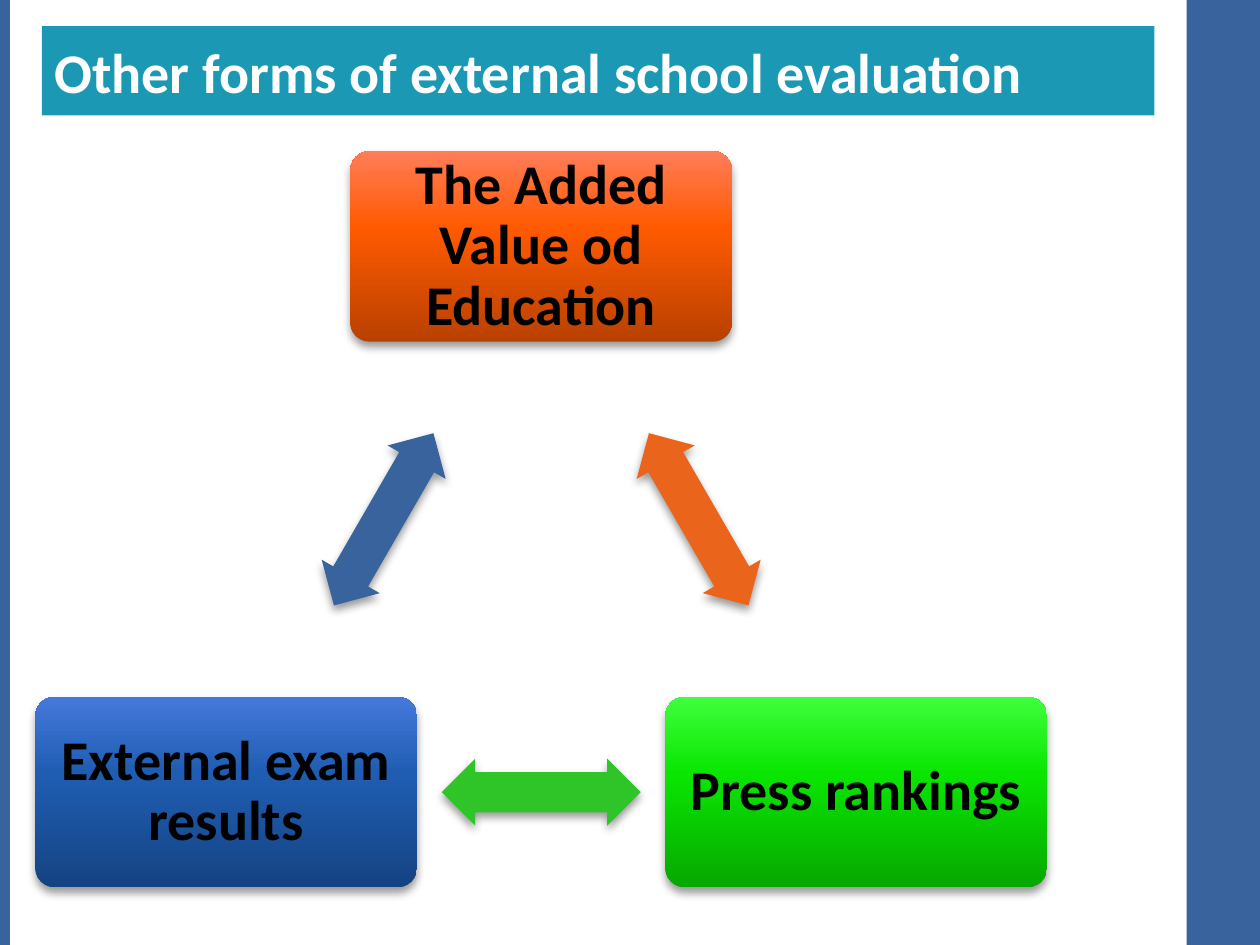
import math

import lxml.etree
import pptx
import pptx.dml.color
import pptx.enum.shapes
import pptx.enum.text
import pptx.oxml
import pptx.util

Cm = pptx.util.Cm
SHAPE = pptx.enum.shapes.MSO_SHAPE
ANCHOR = pptx.enum.text.MSO_ANCHOR
ALIGN = pptx.enum.text.PP_ALIGN
NS = 'xmlns:a="http://schemas.openxmlformats.org/drawingml/2006/main"'
SHADOW = (
    f'<a:effectLst {NS}><a:outerShdw blurRad="65500" dist="38100" dir="5400000" rotWithShape="0">'
    '<a:srgbClr val="000000"><a:alpha val="40000"/></a:srgbClr></a:outerShdw></a:effectLst>'
)


def add_block(kind, center_x, center_y, width, height, fill, shaded=False):
    """Add a borderless shape by its centre; several fills make a gradient from bottom to top."""
    block = slide.shapes.add_shape(
        kind, Cm(center_x - width / 2), Cm(center_y - height / 2), Cm(width), Cm(height))
    block.shadow.inherit = False
    block.line.fill.background()
    properties = block.fill._xPr
    if isinstance(fill, str):
        block.fill.solid()
        block.fill.fore_color.rgb = pptx.dml.color.RGBColor.from_string(fill)
    else:
        stops = "".join(f'<a:gs pos="{position}"><a:srgbClr val="{color}"/></a:gs>'
                        for position, color in zip((0, 60000, 100000), fill))
        gradient = pptx.oxml.parse_xml(
            f'<a:gradFill {NS} rotWithShape="1"><a:gsLst>{stops}</a:gsLst>'
            '<a:lin ang="16200000" scaled="0"/></a:gradFill>')
        properties.find(pptx.oxml.ns.qn("a:prstGeom")).addnext(gradient)
    if shaded:
        effects = properties.find(pptx.oxml.ns.qn("a:effectLst"))
        properties.replace(effects, pptx.oxml.parse_xml(SHADOW))
    return block


def write_text(block, text, color="000000", align=ALIGN.CENTER, spacing=0.9, inset=0.22):
    frame = block.text_frame
    frame.word_wrap = True
    frame.vertical_anchor = ANCHOR.MIDDLE
    frame.margin_left = frame.margin_right = Cm(inset)
    frame.margin_top = frame.margin_bottom = Cm(0.13)
    paragraph = frame.paragraphs[0]
    paragraph.alignment = align
    paragraph.line_spacing = spacing
    run = paragraph.add_run()
    run.text = text
    run.font.name = "Calibri"
    run.font.size = pptx.util.Pt(32)
    run.font.bold = True
    run.font.color.rgb = pptx.dml.color.RGBColor.from_string(color)


deck = pptx.Presentation()
deck.slide_width, deck.slide_height = Cm(25.4), Cm(19.05)
slide = deck.slides.add_slide(deck.slide_layouts[6])

# Side bands and title bar
add_block(SHAPE.RECTANGLE, 24.66, 9.525, 1.48, 19.05, "39639D")
add_block(SHAPE.RECTANGLE, 0.1, 9.525, 0.2, 19.05, "39639D")
title = add_block(SHAPE.RECTANGLE, 12.06, 1.43, 22.43, 1.8, "1B99B4")
write_text(title, "Other forms of external school evaluation", "FFFFFF", ALIGN.LEFT, 1.0, 0.25)

# Evaluation forms on the corners of an equilateral triangle
side = 12.7
top_x, top_y = 10.91, 4.97
base_y = top_y + side * math.sqrt(3) / 2
corners = [(top_x, top_y), (top_x + side / 2, base_y), (top_x - side / 2, base_y)]
forms = [
    ("The Added Value od Education", ("B94100", "FF5A01", "FF7D59"), "EB641B"),
    ("Press rankings", ("06A800", "0AE602", "3FFF3C"), "2FC529"),
    ("External exam results", ("154382", "1F5DB2", "4578DB"), "39639D"),
]
for index, (label, gradient_colors, arrow_color) in enumerate(forms):
    x, y = corners[index]
    next_x, next_y = corners[(index + 1) % 3]
    form = add_block(SHAPE.ROUNDED_RECTANGLE, x, y, 7.69, 3.84, gradient_colors, shaded=True)
    form.adjustments[0] = 0.1
    write_text(form, label)
    arrow = add_block(SHAPE.LEFT_RIGHT_ARROW, (x + next_x) / 2, (y + next_y) / 2,
                      4.01, 1.35, arrow_color, shaded=True)
    arrow.adjustments[0], arrow.adjustments[1] = 0.6, 0.5
    arrow.rotation = 60 + 120 * index

deck.save("out.pptx")
